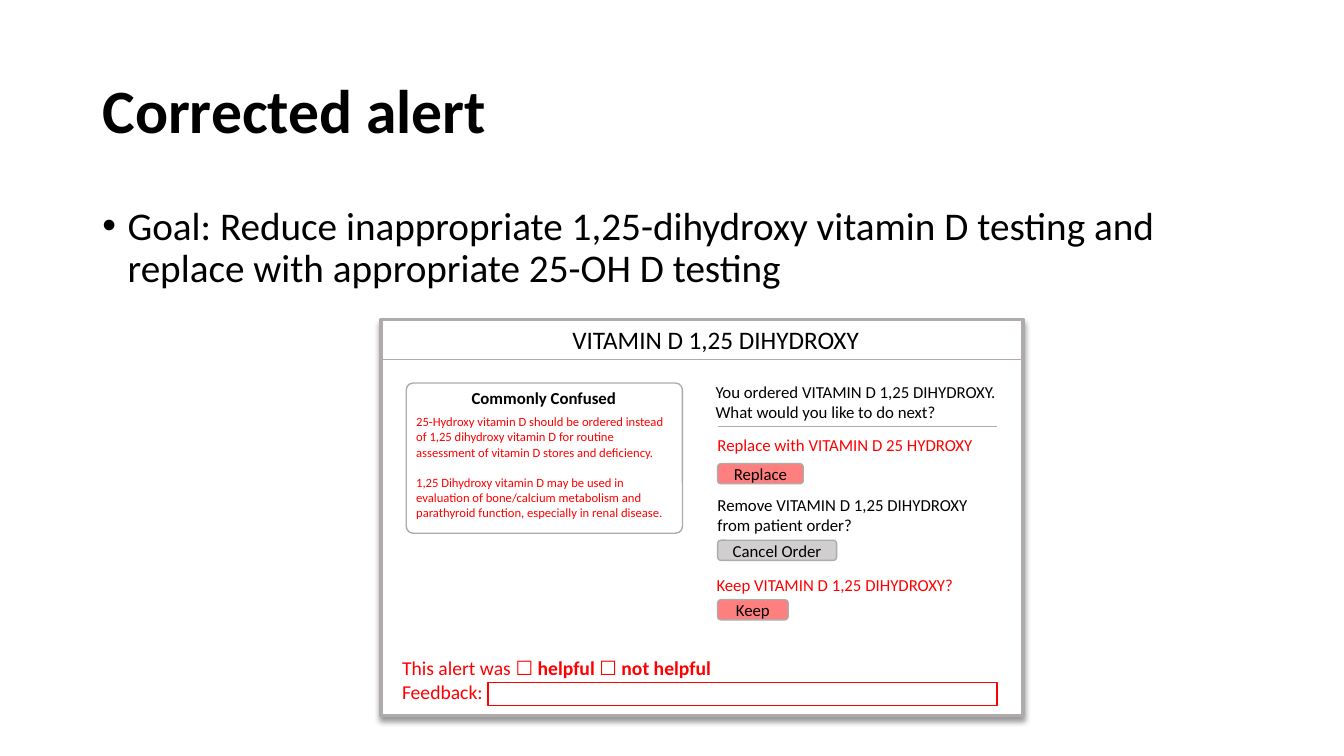
from dataclasses import dataclass

from lxml.etree import SubElement
from pptx import Presentation
from pptx.dml.color import RGBColor
from pptx.enum.shapes import MSO_CONNECTOR, MSO_SHAPE
from pptx.enum.text import MSO_ANCHOR, PP_ALIGN
from pptx.oxml.ns import qn
from pptx.util import Pt


@dataclass(frozen=True)
class Theme:
    font: str = "Calibri"
    black: RGBColor = RGBColor(0, 0, 0)
    white: RGBColor = RGBColor(255, 255, 255)
    red: RGBColor = RGBColor(255, 0, 0)
    border: RGBColor = RGBColor(0xAF, 0xAB, 0xAB)
    button: RGBColor = RGBColor(0xD0, 0xCE, 0xCE)
    title: int = 44
    body: int = 28
    heading: int = 18
    feedback: int = 14
    label: int = 12
    detail: int = 9


theme = Theme()
deck = Presentation()
deck.slide_width, deck.slide_height = Pt(960), Pt(540)
page = deck.slides.add_slide(deck.slide_layouts[1])


def write(shape, paragraphs, size, color=theme.black, align=PP_ALIGN.LEFT):
    """Fill a shape with paragraphs, each a list of (text, bold) runs."""
    frame = shape.text_frame
    frame.word_wrap = True
    for index, runs in enumerate(paragraphs):
        para = frame.add_paragraph() if index else frame.paragraphs[0]
        para.alignment = align
        for text, bold in runs:
            span = para.add_run()
            span.text = text
            span.font.name = theme.font
            span.font.size = Pt(size)
            span.font.bold = bold
            span.font.color.rgb = color
    return frame


def outline(kind, bounds, fill=None, line=theme.border, width=1):
    shape = page.shapes.add_shape(kind, *map(Pt, bounds))
    shape.shadow.inherit = False
    if fill is None:
        shape.fill.background()
    else:
        shape.fill.solid()
        shape.fill.fore_color.rgb = fill
    shape.line.color.rgb = line
    shape.line.width = Pt(width)
    return shape


# Title and goal
title, goal = page.shapes.title, page.placeholders[1]
for holder, top, height in ((title, 28.8, 104.4), (goal, 144, 71.3)):
    holder.left, holder.top = Pt(66), Pt(top)
    holder.width, holder.height = Pt(828), Pt(height)
frame = write(title, [[("Corrected alert", True)]], theme.title)
frame.vertical_anchor = MSO_ANCHOR.MIDDLE
frame.paragraphs[0].line_spacing = 0.9
frame = write(goal, [[("Goal: Reduce inappropriate 1,25-dihydroxy vitamin D testing and "
                       "replace with appropriate 25-OH D testing", False)]], theme.body)
para = frame.paragraphs[0]
para.line_spacing = 0.9
para.space_before = Pt(10)
properties = para._p.get_or_add_pPr()
properties.set("marL", str(Pt(18)))
properties.set("indent", str(-Pt(18)))
SubElement(properties, qn("a:buFont"), typeface="Arial")
SubElement(properties, qn("a:buChar"), char="•")

# Alert window
window_left, window_top, window_width = 272.2, 228.2, 458.6
window = outline(MSO_SHAPE.RECTANGLE, (window_left, window_top, window_width, 283),
                 theme.white, width=2.25)
effects = window._element.spPr.find(qn("a:effectLst"))
shadow = SubElement(effects, qn("a:outerShdw"), blurRad=str(Pt(4)), dist=str(Pt(3)),
                    dir="5400000", algn="t", rotWithShape="0")
shade = SubElement(shadow, qn("a:srgbClr"), val=str(theme.black))
SubElement(shade, qn("a:alpha"), val="40000")
outline(MSO_SHAPE.RECTANGLE, (window_left, window_top, window_width, 28.8))
panel = outline(MSO_SHAPE.ROUNDED_RECTANGLE, (290.2, 273.6, 197.3, 107.3))
panel.adjustments[0] = 0.046

# Text inside the window: bounds, paragraphs, size, colour, alignment
texts = [
    ((396.7, 228.2, 229, 28.8), [[("VITAMIN D 1,25 DIHYDROXY", False)]],
     theme.heading, theme.black, PP_ALIGN.CENTER),
    ((319, 273.6, 139, 21.6), [[("Commonly Confused", True)]],
     theme.label, theme.black, PP_ALIGN.CENTER),
    ((290.2, 292.3, 197.3, 83.5),
     [[("25-Hydroxy vitamin D should be ordered instead of 1,25 dihydroxy vitamin D "
        "for routine assessment of vitamin D stores and deficiency.", False)],
      [("1,25 Dihydroxy vitamin D may be used in evaluation of bone/calcium metabolism "
        "and parathyroid function, especially in renal disease.", False)]],
     theme.detail, theme.red, PP_ALIGN.LEFT),
    ((504, 269.3, 215.3, 36),
     [[("You ordered VITAMIN D 1,25 DIHYDROXY. What would you like to do next?", False)]],
     theme.label, theme.black, PP_ALIGN.LEFT),
    ((505.4, 306.7, 215.3, 21.6), [[("Replace with VITAMIN D 25 HYDROXY", False)]],
     theme.label, theme.red, PP_ALIGN.LEFT),
    ((505.4, 349.9, 215.3, 36),
     [[("Remove VITAMIN D 1,25 DIHYDROXY from patient order?", False)]],
     theme.label, theme.black, PP_ALIGN.LEFT),
    ((504.7, 406.8, 215.3, 21.6), [[("Keep VITAMIN D 1,25 DIHYDROXY?", False)]],
     theme.label, theme.red, PP_ALIGN.LEFT),
    ((280.1, 465.1, 237.6, 41),
     [[("This alert was ☐ ", False), ("helpful", True), (" ☐ ", False),
       ("not helpful", True)],
      [("Feedback:", False)]],
     theme.feedback, theme.red, PP_ALIGN.LEFT),
]
for bounds, paragraphs, size, color, align in texts:
    box = page.shapes.add_textbox(*map(Pt, bounds))
    frame = write(box, paragraphs, size, color, align)
    if size == theme.detail:
        frame.paragraphs[0].space_after = Pt(11)

# Divider, buttons and feedback field
column_left, column_right = 512.6, 712.1
divider = page.shapes.add_connector(MSO_CONNECTOR.STRAIGHT, Pt(column_left), Pt(304.6),
                                    Pt(column_right), Pt(304.6))
divider.line.color.rgb = theme.border
divider.line.width = Pt(0.5)
SubElement(divider._element.spPr, qn("a:effectLst"))

for label, top, width, fill, opacity in (
    ("Replace", 331.2, 61.2, theme.red, 50),
    ("Cancel Order", 385.9, 85, theme.button, 100),
    ("Keep", 428.4, 50.4, theme.red, 50),
):
    button = outline(MSO_SHAPE.ROUNDED_RECTANGLE, (column_left, top, width, 14.4), fill)
    if opacity < 100:
        tint = button._element.spPr.find(qn("a:solidFill")).find(qn("a:srgbClr"))
        SubElement(tint, qn("a:alpha"), val=str(opacity * 1000))
    frame = write(button, [[(label, False)]], theme.label, align=PP_ALIGN.CENTER)
    frame.vertical_anchor = MSO_ANCHOR.MIDDLE
    frame.margin_top = frame.margin_bottom = 0

field_left = 348.5
outline(MSO_SHAPE.RECTANGLE, (field_left, 487.4, column_right - field_left, 16.6),
        theme.white, theme.red)

deck.save("out.pptx")
